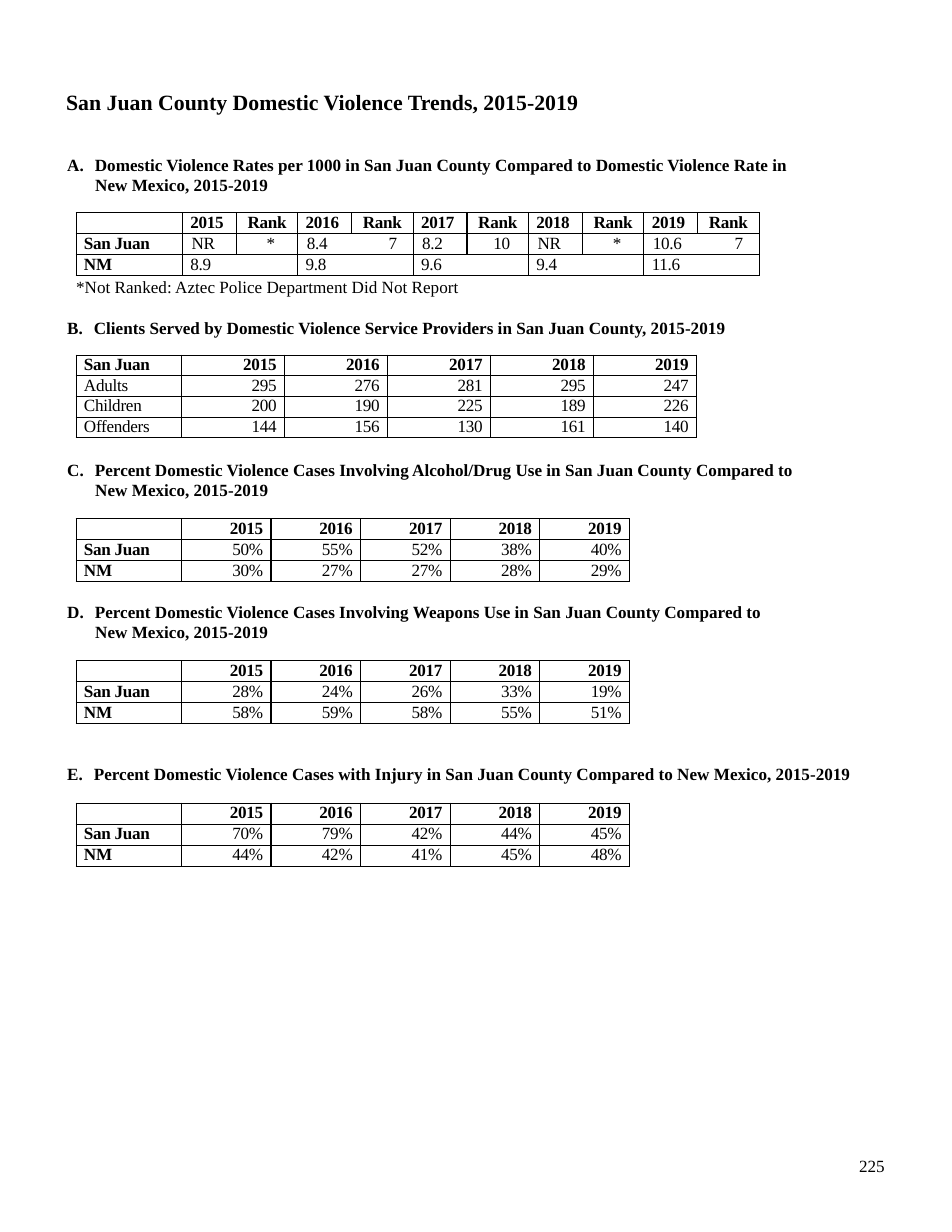
from lxml import etree
from pptx import Presentation, util as u
from pptx.dml.color import RGBColor
from pptx.enum import text as t
from pptx.oxml import ns

INK = "000000"
YEARS = ["2015", "2016", "2017", "2018", "2019"]
LEFT, CENTER, RIGHT = t.PP_ALIGN.LEFT, t.PP_ALIGN.CENTER, t.PP_ALIGN.RIGHT
FRAME = dict(margin_left=0, margin_top=0, margin_right=0, margin_bottom=0,
             word_wrap=True, auto_size=t.MSO_AUTO_SIZE.NONE,
             vertical_anchor=t.MSO_ANCHOR.TOP)


def color(code):
    """Turn a hex string into a colour."""
    return RGBColor.from_string(code)


def apply(item, vals):
    """Set every attribute in vals on item."""
    for name, val in vals.items():
        setattr(item, name, val)


def write(para, words, size=11, bold=False, gap=0):
    """Add a run; gap is its letter spacing in points."""
    run = para.add_run()
    run.text = words
    apply(run.font, dict(name="Times New Roman", size=u.Pt(size), bold=bold))
    run.font.color.rgb = color(INK)
    if gap:
        run.font._element.set("spc", str(round(gap * 100)))


def indent(para, left, first=0):
    """Set the left margin and first-line indent in inches."""
    props = para._p.get_or_add_pPr()
    props.set("marL", str(u.Inches(left)))
    props.set("indent", str(u.Inches(first)))


def label(slide, words, left, top, width):
    """Add a one-line text box."""
    box = slide.shapes.add_textbox(*map(u.Inches, (left, top, width, 0.2)))
    apply(box.text_frame, FRAME)
    write(box.text_frame.paragraphs[0], words)


def heading(slide, mark, words, top, width, height):
    """Add a lettered section heading with a hanging indent."""
    box = slide.shapes.add_textbox(*map(u.Inches, (0.59, top, width, height)))
    apply(box.text_frame, FRAME)
    para = box.text_frame.paragraphs[0]
    if height > 0.2:
        para.line_spacing = u.Pt(12.7)
    indent(para, 0.26, -0.25)
    write(para, mark + ".", bold=True)
    write(para, " ", bold=True, gap=4.3)
    write(para, words, bold=True)


def title(slide, words):
    """Place and format the title."""
    shape = slide.shapes.title
    apply(shape, dict(left=u.Inches(0.59), top=u.Inches(0.79),
                      width=u.Inches(6.47), height=u.Inches(0.25)))
    apply(shape.text_frame, FRAME)
    para = shape.text_frame.paragraphs[0]
    apply(para, dict(alignment=LEFT, line_spacing=1.0, space_before=u.Pt(0)))
    write(para, words, 14, True)


def border(cell):
    """Draw a thin line on all four sides of a cell."""
    props = cell._tc.get_or_add_tcPr()
    for spot, side in enumerate(("lnL", "lnR", "lnT", "lnB")):
        line = etree.Element(ns.qn("a:" + side), w=str(u.Pt(0.75)))
        fill = etree.SubElement(line, ns.qn("a:solidFill"))
        etree.SubElement(fill, ns.qn("a:srgbClr"), val=INK)
        props.insert(spot, line)


def fill(cell, words, bold, align, left=0.07, right=0.07):
    """Write and format one table cell."""
    apply(cell, dict(margin_left=u.Inches(left), margin_right=u.Inches(right),
                     margin_top=0, margin_bottom=0))
    cell.fill.background()
    border(cell)
    para = cell.text_frame.paragraphs[0]
    apply(para, dict(alignment=align, line_spacing=u.Pt(12.4)))
    if words:
        write(para, words, bold=bold, gap=-0.2)
    else:
        etree.SubElement(para._p, ns.qn("a:endParaRPr"), sz="1100")


def grid(slide, top, height, cols, count):
    """Add a plain table with the given column widths."""
    frame = slide.shapes.add_table(count, len(cols), u.Inches(0.68), u.Inches(top),
                                   u.Inches(sum(cols)), u.Inches(height))
    table = frame.table
    apply(table, dict(first_row=False, horz_banding=False))
    for col, width in zip(table.columns, cols):
        col.width = u.Inches(width)
    for row in table.rows:
        row.height = u.Inches(height / count)
    return table


def counts(slide, top, height, width, rows, corner="", bold=True):
    """Add a table of yearly values; bold sets the row names."""
    rows = [[corner, *YEARS], *rows]
    table = grid(slide, top, height, [0.94] + [width] * 5, len(rows))
    for r, row in enumerate(rows):
        for c, words in enumerate(row):
            strong = r == 0 or (c == 0 and bold)
            fill(table.cell(r, c), words, strong, RIGHT if c else LEFT)


def rates(slide, local, state):
    """Add the table of rates and ranks, two columns a year."""
    table = grid(slide, 1.9, 0.56, [0.95] + [0.48, 0.55] * 5, 3)
    for r, name in enumerate(["", "San Juan", "NM"]):
        fill(table.cell(r, 0), name, True, LEFT)
    for k, year in enumerate(YEARS):
        c = 2 * k + 1
        rate, rank = local[k]
        fill(table.cell(0, c), year, True, LEFT)
        fill(table.cell(0, c + 1), "Rank", True, LEFT, 0.1, 0)
        joint = rank == "7"
        fill(table.cell(1, c), f"{rate}\t{rank}" if joint else rate, False, LEFT, 0.08, 0)
        fill(table.cell(1, c + 1), "" if joint else rank, False, CENTER, 0.07, 0)
        if joint:
            props = table.cell(1, c).text_frame.paragraphs[0]._p.get_or_add_pPr()
            tabs = etree.SubElement(props, ns.qn("a:tabLst"))
            etree.SubElement(tabs, ns.qn("a:tab"), pos=str(u.Inches(0.73)), algn="l")
            table.cell(1, c).merge(table.cell(1, c + 1))
        fill(table.cell(2, c), state[k], False, LEFT)
        fill(table.cell(2, c + 1), "", False, LEFT)
        table.cell(2, c).merge(table.cell(2, c + 1))


def main():
    """Build the page of county trends."""
    deck = Presentation()
    apply(deck, dict(slide_width=u.Inches(8.5), slide_height=u.Inches(11)))
    slide = deck.slides.add_slide(deck.slide_layouts[5])
    title(slide, "San Juan County Domestic Violence Trends, 2015-2019")
    case = "Percent Domestic Violence Cases "
    tail = " in San Juan County Compared to New Mexico, 2015-2019"
    for item in [
        ("A", "Domestic Violence Rates per 1000 in San Juan County Compared to "
              "Domestic Violence Rate in New Mexico, 2015-2019", 1.39, 6.5, 0.36),
        ("B", "Clients Served by Domestic Violence Service Providers in "
              "San Juan County, 2015-2019", 2.83, 6.5, 0.2),
        ("C", case + "Involving Alcohol/Drug Use" + tail, 4.11, 6.55, 0.36),
        ("D", case + "Involving Weapons Use" + tail, 5.38, 6.3, 0.36),
        ("E", case + "with Injury" + tail, 6.82, 7.2, 0.2),
    ]:
        heading(slide, *item)
    rates(slide, [("NR", "*"), ("8.4", "7"), ("8.2", "10"), ("NR", "*"), ("10.6", "7")],
          ["8.9", "9.8", "9.6", "9.4", "11.6"])
    label(slide, "*Not Ranked: Aztec Police Department Did Not Report", 0.68, 2.47, 5)
    counts(slide, 3.17, 0.74, 0.92, [
        ["Adults", "295", "276", "281", "295", "247"],
        ["Children", "200", "190", "225", "189", "226"],
        ["Offenders", "144", "156", "130", "161", "140"],
    ], "San Juan", False)
    for top, local, state in [
        (4.63, (50, 55, 52, 38, 40), (30, 27, 27, 28, 29)),
        (5.9, (28, 24, 26, 33, 19), (58, 59, 58, 55, 51)),
        (7.17, (70, 79, 42, 44, 45), (44, 42, 41, 45, 48)),
    ]:
        rows = [[name, *(f"{val}%" for val in vals)]
                for name, vals in (("San Juan", local), ("NM", state))]
        counts(slide, top, 0.56, 0.8, rows)
    label(slide, "225", 7.67, 10.32, 0.3)
    deck.save("out.pptx")


if __name__ == "__main__":
    main()
